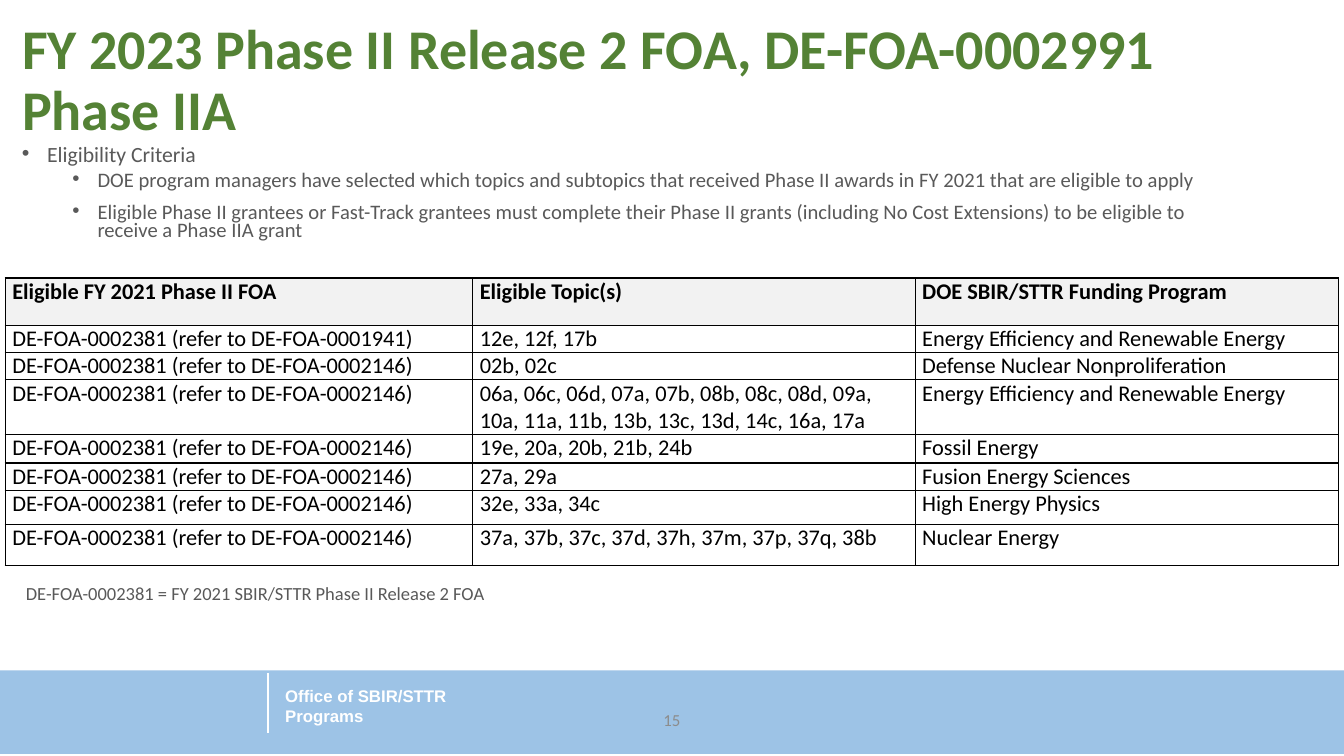
from lxml import etree
from pptx import Presentation
from pptx.dml.color import RGBColor
from pptx.enum.shapes import MSO_CONNECTOR, MSO_SHAPE
from pptx.enum.text import MSO_ANCHOR, MSO_AUTO_SIZE, PP_ALIGN
from pptx.oxml import parse_xml
from pptx.oxml.ns import nsdecls, qn
from pptx.util import Pt

TOP, MIDDLE = MSO_ANCHOR.TOP, MSO_ANCHOR.MIDDLE
LEFT, CENTER = PP_ALIGN.LEFT, PP_ALIGN.CENTER
COLORS = {"band": "9DC3E6", "white": "FFFFFF", "title": "548235", "body": "595959",
          "black": "000000", "header": "F2F2F2", "number": "8C8C8C"}


def color(name):
    return RGBColor.from_string(COLORS[name])


def format_text(tf, size, color_name, bold=False, font="Calibri", align=LEFT):
    tf.word_wrap = True
    for p in tf.paragraphs:
        p.alignment = align
        for r in p.runs:
            r.font.size = Pt(size)
            r.font.name = font
            r.font.bold = bold
            r.font.color.rgb = color(color_name)


prs = Presentation()
prs.slide_width, prs.slide_height = Pt(960), Pt(540)
s = prs.slides.add_slide(prs.slide_layouts[5])

# Footer band
band = s.shapes.add_shape(MSO_SHAPE.RECTANGLE, Pt(0), Pt(478.8), Pt(960), Pt(59.8))
band.shadow.inherit = False
band.fill.solid()
band.fill.fore_color.rgb = color("band")
band.line.fill.background()

office = s.shapes.add_textbox(Pt(196.6), Pt(485.3), Pt(152), Pt(37.4))
office.text_frame.text = "Office of SBIR/STTR Programs"
office.text_frame.vertical_anchor = MIDDLE
format_text(office.text_frame, 12, "white", True, "Arial")

divider = s.shapes.add_connector(MSO_CONNECTOR.STRAIGHT, Pt(191.5), Pt(481), Pt(191.5), Pt(523.5))
divider.line.color.rgb = color("white")
divider.line.width = Pt(1)
etree.SubElement(divider._element.spPr, qn("a:effectLst"))

number = s.shapes.add_textbox(Pt(372), Pt(500), Pt(216), Pt(28.8))
number.text_frame.text = "15"
number.text_frame.vertical_anchor = MIDDLE
format_text(number.text_frame, 12, "number", align=CENTER)

# Title
title = s.shapes.title
title.left, title.top, title.width, title.height = Pt(8.6), Pt(11.5), Pt(895.7), Pt(61.2)
tf = title.text_frame
tf.text = "FY 2023 Phase II Release 2 FOA, DE-FOA-0002991\vPhase IIA"
tf.auto_size = MSO_AUTO_SIZE.NONE
tf.vertical_anchor = TOP
tf.paragraphs[0].line_spacing = 0.9
format_text(tf, 40, "title", True)

# Eligibility criteria: text, level, size, indent, space before, space after
criteria = [
    ("Eligibility Criteria", 0, 15.5, 18, 0, 0),
    ("DOE program managers have selected which topics and subtopics that received "
     "Phase II awards in FY 2021 that are eligible to apply", 1, 14.7, 54, 5, 6),
    ("Eligible Phase II grantees or Fast-Track grantees must complete their Phase II grants "
     "(including No Cost Extensions) to be eligible to receive a Phase IIA grant",
     1, 14.7, 54, 5, 6),
]
body = s.shapes.add_textbox(Pt(8.6), Pt(102.2), Pt(864), Pt(80))
tf = body.text_frame
tf.text = "\n".join(row[0] for row in criteria)
format_text(tf, 14.7, "body")
for p, (text, level, size, indent, before, after) in zip(tf.paragraphs, criteria):
    p.level = level
    p.line_spacing = 0.7
    p.space_before, p.space_after = Pt(before), Pt(after)
    p.runs[0].font.size = Pt(size)
    pPr = p._p.get_or_add_pPr()
    pPr.set("marL", str(Pt(indent)))
    pPr.set("indent", str(Pt(-18)))
    etree.SubElement(pPr, qn("a:buFont")).set("typeface", "Arial")
    etree.SubElement(pPr, qn("a:buChar")).set("char", "•")

# Eligible topics table
FOA = "DE-FOA-0002381 (refer to DE-FOA-0002146)"
rows = [
    ("Eligible FY 2021 Phase II FOA", "Eligible Topic(s)", "DOE SBIR/STTR Funding Program"),
    ("DE-FOA-0002381 (refer to DE-FOA-0001941)", "12e, 12f, 17b",
     "Energy Efficiency and Renewable Energy"),
    (FOA, "02b, 02c", "Defense Nuclear Nonproliferation"),
    (FOA, "06a, 06c, 06d, 07a, 07b, 08b, 08c, 08d, 09a, "
          "10a, 11a, 11b, 13b, 13c, 13d, 14c, 16a, 17a",
     "Energy Efficiency and Renewable Energy"),
    (FOA, "19e, 20a, 20b, 21b, 24b", "Fossil Energy"),
    (FOA, "27a, 29a", "Fusion Energy Sciences"),
    (FOA, "32e, 33a, 34c", "High Energy Physics"),
    (FOA, "37a, 37b, 37c, 37d, 37h, 37m, 37p, 37q, 38b", "Nuclear Energy"),
]
widths = [334, 316, 302.5]
heights = [33.8, 19.5, 19.5, 39, 20.4, 19.5, 24.6, 29.4]
table = s.shapes.add_table(len(rows), len(widths), Pt(3.8), Pt(198.6),
                           Pt(sum(widths)), Pt(sum(heights))).table
table.first_row = table.horz_banding = False
for column, width in zip(table.columns, widths):
    column.width = Pt(width)
for i, (row, height) in enumerate(zip(rows, heights)):
    table.rows[i].height = Pt(height)
    for j, text in enumerate(row):
        cell = table.cell(i, j)
        cell.text_frame.text = text
        cell.margin_left = cell.margin_right = Pt(5)
        cell.margin_top = cell.margin_bottom = Pt(0)
        format_text(cell.text_frame, 16, "black", i == 0)
        tcPr = cell._tc.get_or_add_tcPr()
        for side in ("lnL", "lnR", "lnT", "lnB"):
            tcPr.append(parse_xml(
                f'<a:{side} {nsdecls("a")} w="{Pt(1)}"><a:solidFill>'
                f'<a:srgbClr val="{COLORS["black"]}"/></a:solidFill></a:{side}>'))
        cell.fill.solid()
        cell.fill.fore_color.rgb = color("header" if i == 0 else "white")

# Footnote
note = s.shapes.add_textbox(Pt(11.4), Pt(412), Pt(600), Pt(24))
note.text_frame.text = "DE-FOA-0002381 = FY 2021 SBIR/STTR Phase II Release 2 FOA"
note.text_frame.vertical_anchor = MIDDLE
format_text(note.text_frame, 13.2, "body")

prs.save("out.pptx")
